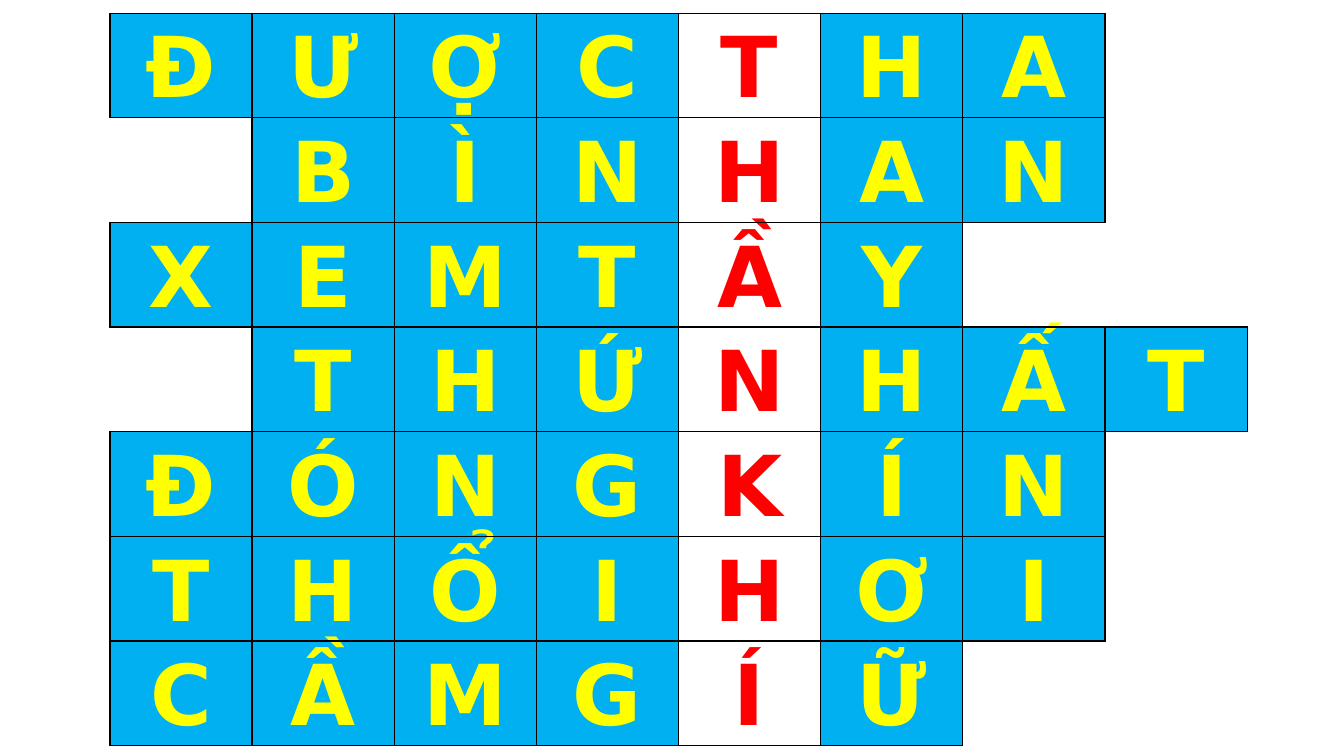
from lxml.etree import SubElement
from pptx import Presentation
from pptx.dml.color import RGBColor
from pptx.enum.text import MSO_ANCHOR as Anchor, PP_ALIGN as Align
from pptx.oxml.ns import qn
from pptx.util import Inches, Pt

BLUE = RGBColor(0x00, 0xB0, 0xF0)
WHITE = RGBColor(0xFF, 0xFF, 0xFF)
YELLOW = RGBColor(0xFF, 0xFF, 0x00)
RED = RGBColor(0xFF, 0x00, 0x00)
BLACK = RGBColor(0x00, 0x00, 0x00)

# One string per crossword row; a space is an empty square
ANSWERS = ["ĐƯỢCTHA", " BÌNHAN", "XEMTẦY", " THỨNHẤT", "ĐÓNGKÍN", "THỔIHƠI", "CẦMGÍỮ"]
COLUMNS = 10
KEY_COLUMN = 4
LEFT, TOP = 1.09, 0.13
COLUMN_WIDTH, GRID_HEIGHT = 1.41, 7.25

# Border tag and the step to the square on the other side
SIDES = [("a:lnL", 0, -1), ("a:lnR", 0, 1), ("a:lnT", -1, 0), ("a:lnB", 1, 0)]


def letter_at(row, column):
    """Return the letter in a square, or an empty string."""
    if 0 <= row < len(ANSWERS) and 0 <= column < len(ANSWERS[row]):
        return ANSWERS[row][column].strip()
    return ""


def set_borders(cell, row, column):
    """Draw each edge that touches a letter square and clear the others."""
    properties = cell._tc.get_or_add_tcPr()
    for tag, row_step, column_step in SIDES:
        line = SubElement(properties, qn(tag), w=str(Pt(1)))
        if letter_at(row, column) or letter_at(row + row_step, column + column_step):
            fill = SubElement(line, qn("a:solidFill"))
            SubElement(fill, qn("a:srgbClr"), val=str(BLACK))
        else:
            SubElement(line, qn("a:noFill"))


def write_letter(cell, letter, is_key):
    """Fill a square and centre its letter."""
    cell.fill.solid()
    cell.fill.fore_color.rgb = WHITE if is_key else BLUE
    cell.vertical_anchor = Anchor.MIDDLE
    cell.margin_left = cell.margin_right = Inches(0.07)
    cell.margin_top = cell.margin_bottom = 0
    para = cell.text_frame.paragraphs[0]
    para.text = letter
    para.alignment = Align.CENTER
    para.line_spacing = 1.07
    para.font.name = "DejaVu Sans"
    para.font.size = Pt(60)
    para.font.bold = True
    para.font.color.rgb = RED if is_key else YELLOW


def add_crossword(page):
    """Add the crossword with its highlighted key column."""
    frame = page.shapes.add_table(
        len(ANSWERS), COLUMNS, Inches(LEFT), Inches(TOP),
        Inches(COLUMN_WIDTH * COLUMNS), Inches(GRID_HEIGHT))
    table = frame.table
    table.first_row = False
    table.horz_banding = False
    for row in range(len(ANSWERS)):
        for column in range(COLUMNS):
            cell = table.cell(row, column)
            set_borders(cell, row, column)
            letter = letter_at(row, column)
            if letter:
                write_letter(cell, letter, column == KEY_COLUMN)
            else:
                cell.fill.background()


def main():
    deck = Presentation()
    deck.slide_width = Inches(13.33)
    deck.slide_height = Inches(7.5)
    page = deck.slides.add_slide(deck.slide_layouts[6])
    add_crossword(page)
    deck.save("out.pptx")


if __name__ == "__main__":
    main()
